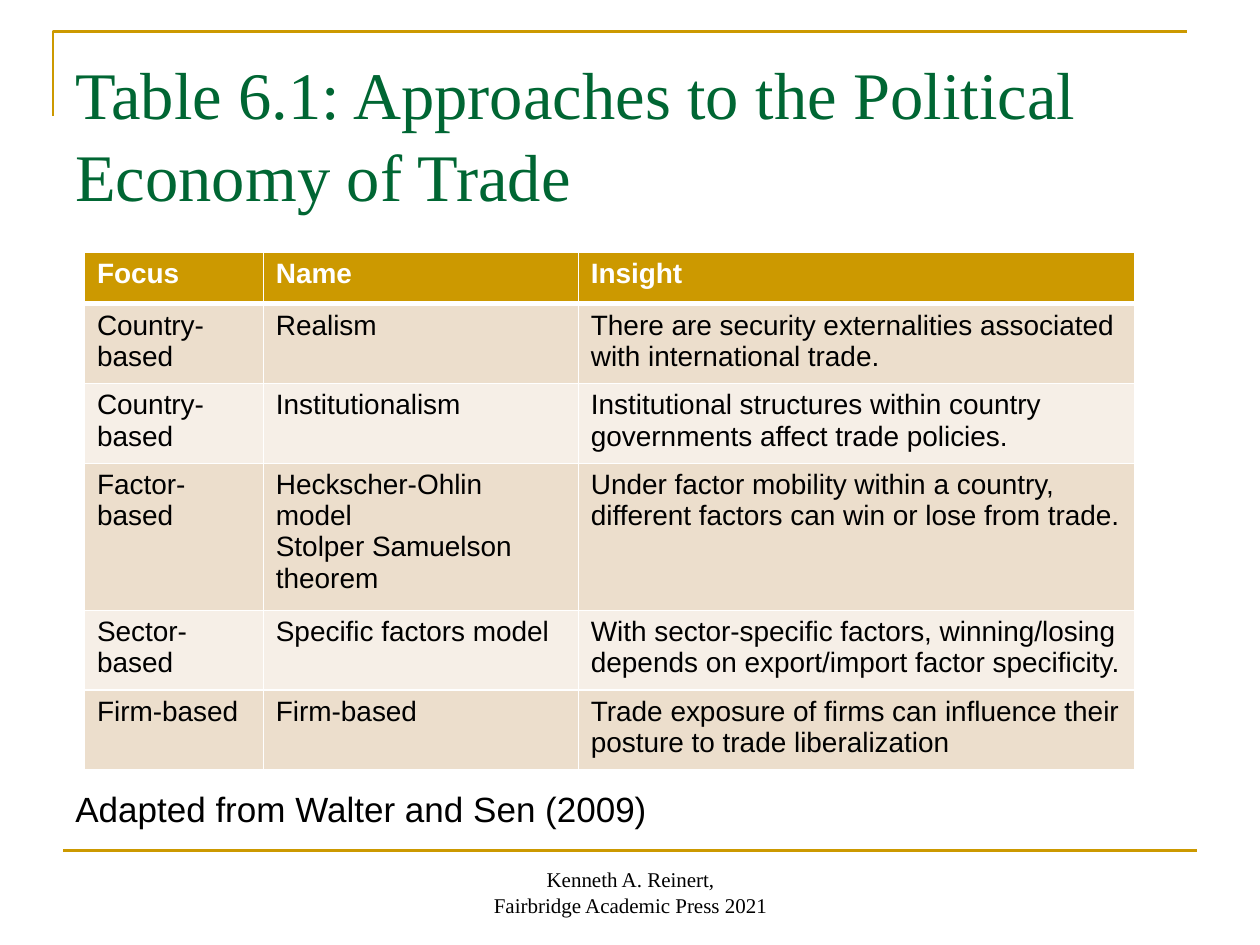
from lxml import etree
from pptx import Presentation
from pptx.dml.color import RGBColor
from pptx.enum import shapes, text
from pptx.oxml import ns
from pptx.util import Inches, Pt

TITLE = "Table 6.1: Approaches to the Political Economy of Trade"
HEADINGS = ("Focus", "Name", "Insight")
APPROACHES = [
    ("Country-based", "Realism",
     "There are security externalities associated with international trade."),
    ("Country-based", "Institutionalism",
     "Institutional structures within country governments affect trade policies."),
    ("Factor-based", "Heckscher-Ohlin model\nStolper Samuelson theorem",
     "Under factor mobility within a country, different factors can win or lose from trade."),
    ("Sector-based", "Specific factors model",
     "With sector-specific factors, winning/losing depends on export/import factor specificity."),
    ("Firm-based", "Firm-based",
     "Trade exposure of firms can influence their posture to trade liberalization"),
]
CITATION = "Adapted from Walter and Sen (2009)"
FOOTER = "Kenneth A. Reinert,\nFairbridge Academic Press 2021"

COLUMN_WIDTHS = (1.42, 2.5, 4.42)
ROW_HEIGHTS = (0.41, 0.59, 0.59, 1.09, 0.59, 0.59)

THEME = {
    "serif": "Times New Roman", "sans": "Arial",
    "gold": "CC9900", "green": "006633", "black": "000000", "white": "FFFFFF",
    "bands": ("ECDECC", "F6EFE7"),
    "title": 38, "cell": 16, "citation": 20, "footer": 12,
    "rule": 1.5, "border": 1, "heading_border": 3,
}


def color(value):
    return RGBColor.from_string(value)


def write(frame, content, font, size, ink, bold=False, align=text.PP_ALIGN.LEFT):
    frame.text = content
    frame.word_wrap = True
    for paragraph in frame.paragraphs:
        paragraph.alignment = align
        paragraph.font.name = font
        paragraph.font.size = Pt(size)
        paragraph.font.bold = bold
        paragraph.font.color.rgb = color(ink)


def add_text(slide, box, *style, **options):
    frame = slide.shapes.add_textbox(*map(Inches, box)).text_frame
    write(frame, *style, **options)
    return frame


def draw_rule(shape):
    shape.line.color.rgb = color(THEME["gold"])
    shape.line.width = Pt(THEME["rule"])


def set_borders(cell, bottom):
    properties = cell._tc.get_or_add_tcPr()
    for side in "LRTB":
        width = bottom if side == "B" else THEME["border"]
        line = etree.SubElement(properties, ns.qn(f"a:ln{side}"), w=str(Pt(width)))
        fill = etree.SubElement(line, ns.qn("a:solidFill"))
        etree.SubElement(fill, ns.qn("a:srgbClr"), val=THEME["white"])


def add_rules(slide):
    builder = slide.shapes.build_freeform(Inches(0.42), Inches(0.92))
    builder.add_line_segments(
        [(Inches(0.42), Inches(0.25)), (Inches(9.42), Inches(0.25))], close=False)
    corner = builder.convert_to_shape()
    corner.fill.background()
    corner.shadow.inherit = False
    draw_rule(corner)

    footer_rule = slide.shapes.add_connector(
        shapes.MSO_CONNECTOR.STRAIGHT, *map(Inches, (0.5, 6.75, 9.5, 6.75)))
    etree.SubElement(footer_rule._element.spPr, ns.qn("a:effectLst"))
    draw_rule(footer_rule)


def add_approaches(slide):
    rows = [HEADINGS, *APPROACHES]
    table = slide.shapes.add_table(
        len(rows), len(HEADINGS), Inches(0.67), Inches(2),
        Inches(sum(COLUMN_WIDTHS)), Inches(sum(ROW_HEIGHTS))).table
    for column, width in zip(table.columns, COLUMN_WIDTHS):
        column.width = Inches(width)
    for index, (row, height, contents) in enumerate(zip(table.rows, ROW_HEIGHTS, rows)):
        row.height = Inches(height)
        heading = index == 0
        band = THEME["gold"] if heading else THEME["bands"][(index - 1) % 2]
        ink = THEME["white"] if heading else THEME["black"]
        for cell, content in zip(row.cells, contents):
            set_borders(cell, THEME["heading_border" if heading else "border"])
            cell.fill.solid()
            cell.fill.fore_color.rgb = color(band)
            write(cell.text_frame, content, THEME["sans"], THEME["cell"], ink, heading)


def main():
    deck = Presentation()
    deck.slide_width, deck.slide_height = Inches(10), Inches(7.5)
    slide = deck.slides.add_slide(deck.slide_layouts[6])

    add_rules(slide)
    title = add_text(slide, (0.5, 0.3, 9, 1.25), TITLE,
                     THEME["serif"], THEME["title"], THEME["green"])
    title.margin_top = Inches(0.1)
    title.paragraphs[0].line_spacing = 1.03
    add_approaches(slide)
    add_text(slide, (0.5, 6.2, 9, 0.5), CITATION,
             THEME["sans"], THEME["citation"], THEME["black"]
             ).paragraphs[0].space_before = Pt(2)
    footer = add_text(slide, (3.42, 6.83, 3.17, 0.5), FOOTER,
                      THEME["serif"], THEME["footer"], THEME["black"],
                      align=text.PP_ALIGN.CENTER)
    footer.vertical_anchor = text.MSO_ANCHOR.BOTTOM
    deck.save("out.pptx")


if __name__ == "__main__":
    main()
